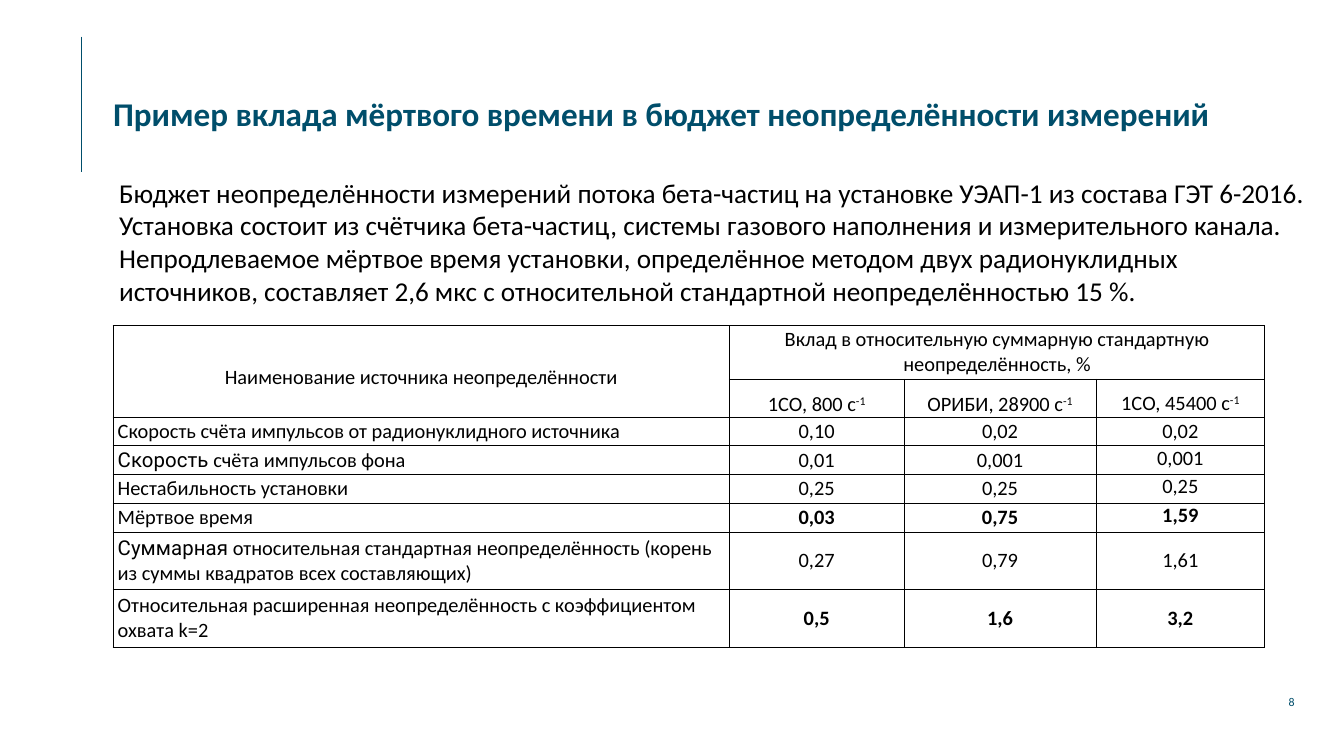
from lxml import etree
from pptx import Presentation
from pptx.dml.color import RGBColor
from pptx.enum import shapes, text
from pptx.oxml import ns
from pptx.util import Inches, Pt

COLORS = {"teal": "004E6B", "black": "000000"}
LEFT = 1.85
COLS = [10.08, 2.86, 3.14, 2.76]
HEIGHTS = [0.88, 0.62] + [0.47] * 4 + [0.94] * 2
TITLE = "Пример вклада мёртвого времени в бюджет неопределённости измерений"
INTRO = (
    "Бюджет неопределённости измерений потока бета-частиц на установке УЭАП-1 "
    "из состава ГЭТ 6-2016. Установка состоит из счётчика бета-частиц, системы "
    "газового наполнения и измерительного канала. Непродлеваемое мёртвое время "
    "установки, определённое методом двух радионуклидных источников, составляет "
    "2,6 мкс с относительной стандартной неопределённостью 15 %."
)
SOURCE = "Наименование источника неопределённости"
SHARE = "Вклад в относительную суммарную стандартную неопределённость, %"
RATES = ["1СО, 800 с", "ОРИБИ, 28900 с", "1СО, 45400 с"]
# Roboto lead word, rest of the label, values, bold values
ROWS = [
    ("", "Скорость счёта импульсов от радионуклидного источника",
     ["0,10", "0,02", "0,02"], False),
    ("Скорость", " счёта импульсов фона", ["0,01", "0,001", "0,001"], False),
    ("", "Нестабильность установки", ["0,25", "0,25", "0,25"], False),
    ("", "Мёртвое время", ["0,03", "0,75", "1,59"], True),
    ("Суммарная", " относительная стандартная неопределённость "
     "(корень из суммы квадратов всех составляющих)",
     ["0,27", "0,79", "1,61"], False),
    ("", "Относительная расширенная неопределённость с коэффициентом охвата k=2",
     ["0,5", "1,6", "3,2"], True),
]
TOP_ROWS = (1, 3, 4, 5)  # rows whose last cell is set at the top


def add_run(para, words, size=24, color="black", bold=False, face="Calibri", **attrs):
    run = para.add_run()
    run.text = words
    font = run.font
    font.name, font.size, font.bold = face, Pt(size), bold
    font.color.rgb = RGBColor.from_string(COLORS[color])
    for key, value in attrs.items():
        font._element.set(key, str(value))


def set_frame(frame, inset=0.0, wrap=True):
    frame.word_wrap = wrap
    frame.margin_left = frame.margin_right = Inches(inset)
    frame.margin_top = frame.margin_bottom = Inches(inset / 2)


def add_rule(slide):
    rule = slide.shapes.add_connector(
        shapes.MSO_CONNECTOR.STRAIGHT,
        Inches(1.33), Inches(0.6), Inches(1.33), Inches(2.82))
    line = rule.line
    line.width = Pt(1.65)
    line.fill.solid()
    line.fill.fore_color.rgb = RGBColor.from_string(COLORS["teal"])
    etree.SubElement(rule._element.spPr, ns.qn("a:effectLst"))


def set_title(slide):
    title = slide.shapes.title
    title.left, title.top = Inches(LEFT), Inches(1.13)
    title.width, title.height = Inches(18.39), Inches(1.46)
    frame = title.text_frame
    set_frame(frame)
    frame.auto_size = text.MSO_AUTO_SIZE.NONE
    frame.vertical_anchor = text.MSO_ANCHOR.MIDDLE
    para = frame.paragraphs[0]
    para.alignment = text.PP_ALIGN.LEFT
    add_run(para, TITLE, 39, "teal", True)


def add_text(slide, box, inset=0.0, wrap=True):
    frame = slide.shapes.add_textbox(*map(Inches, box)).text_frame
    set_frame(frame, inset, wrap)
    frame.auto_size = text.MSO_AUTO_SIZE.SHAPE_TO_FIT_TEXT
    return frame.paragraphs[0]


def set_cell(cell):
    """Clear the fill and draw thin black borders."""
    cell.fill.background()
    cell.margin_left = cell.margin_right = Pt(5.4)
    cell.margin_top = cell.margin_bottom = 0
    cell.vertical_anchor = text.MSO_ANCHOR.MIDDLE
    props = cell._tc.get_or_add_tcPr()
    for spot, side in enumerate(("lnL", "lnR", "lnT", "lnB")):
        line = etree.Element(ns.qn("a:" + side), w=str(Pt(1)))
        fill = etree.SubElement(line, ns.qn("a:solidFill"))
        etree.SubElement(fill, ns.qn("a:srgbClr"), val=COLORS["black"])
        props.insert(spot, line)


def get_para(table, row, col, space=None):
    para = table.cell(row, col).text_frame.paragraphs[0]
    para.alignment = text.PP_ALIGN.CENTER
    if space:
        para.line_spacing = space
    return para


def add_budget(slide):
    table = slide.shapes.add_table(
        len(HEIGHTS), len(COLS), Inches(LEFT), Inches(5.32),
        Inches(sum(COLS)), Inches(sum(HEIGHTS))).table
    table.first_row = table.horz_banding = False
    for col, width in zip(table.columns, COLS):
        col.width = Inches(width)
    for row, height in zip(table.rows, HEIGHTS):
        row.height = Inches(height)
    for cell in table.iter_cells():
        set_cell(cell)
    for row in TOP_ROWS:
        table.cell(row, 3).vertical_anchor = text.MSO_ANCHOR.TOP

    # Header
    table.cell(0, 0).merge(table.cell(1, 0))
    table.cell(0, 1).merge(table.cell(0, 3))
    add_run(get_para(table, 0, 0, 1.5), SOURCE, kern=0)
    add_run(get_para(table, 0, 1), SHARE, kern=0)
    for col, rate in enumerate(RATES, 1):
        para = get_para(table, 1, col, 1.5)
        add_run(para, rate, kern=0)
        add_run(para, "-1", kern=0, baseline=30000)

    # Sources and values
    for row, (lead, label, values, bold) in enumerate(ROWS, 2):
        para = get_para(table, row, 0)
        para.alignment = text.PP_ALIGN.LEFT
        if lead:
            add_run(para, lead, face="Roboto", kern=0, spc=10)
        add_run(para, label, kern=0)
        for col, value in enumerate(values, 1):
            add_run(get_para(table, row, col), value, bold=bold, kern=0)


def main():
    deck = Presentation()
    deck.slide_width, deck.slide_height = Pt(1583), Pt(890)
    deck.element.sldSz.attrib.pop("type", None)  # no longer a 4:3 screen
    slide = deck.slides.add_slide(deck.slide_layouts[5])

    # Heading
    add_rule(slide)
    set_title(slide)

    # Body
    add_run(add_text(slide, (LEFT, 2.83, 19.68, 2.26), 0.1), INTRO, 32)
    add_budget(slide)

    # Page number
    page = add_text(slide, (20.96, 11.36, 0.22, 0.28), wrap=False)
    page.alignment = text.PP_ALIGN.RIGHT
    add_run(page, "8", 14, "teal", spc=10)

    deck.save("out.pptx")


if __name__ == "__main__":
    main()
